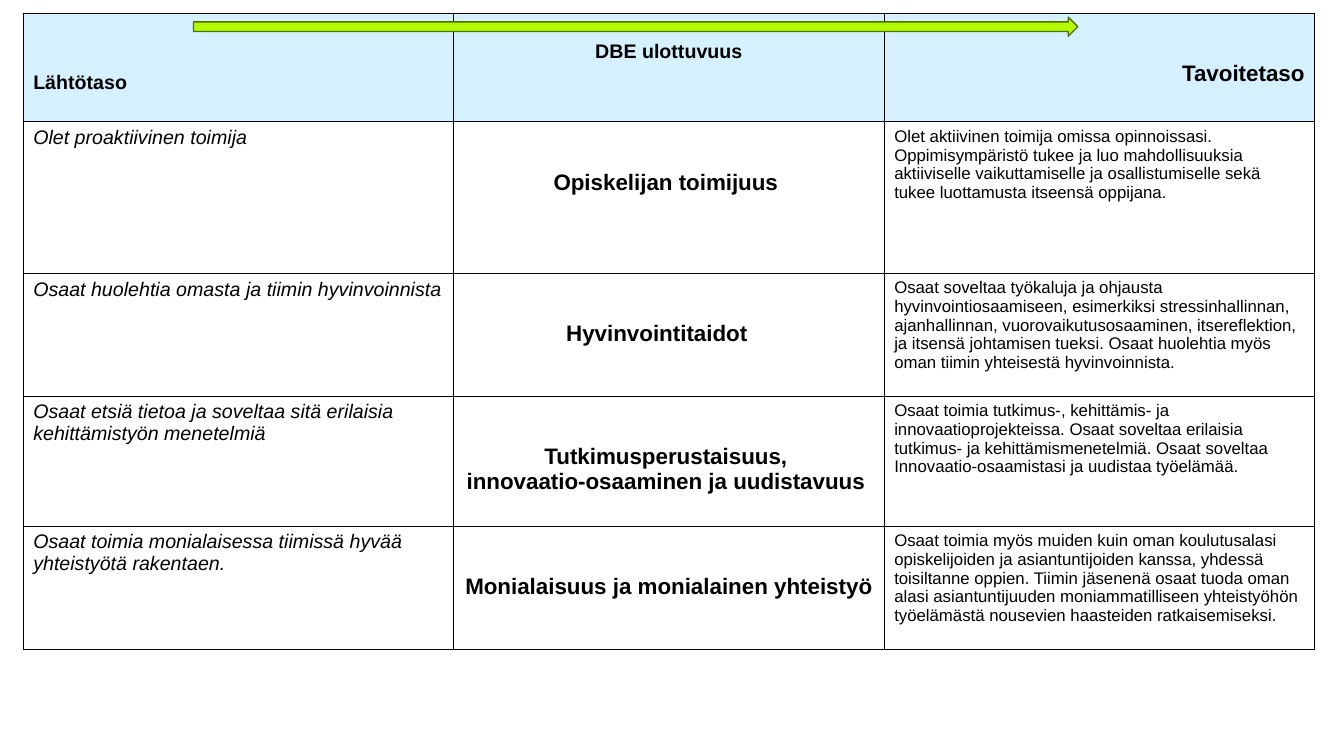
from pptx import Presentation
from pptx.dml.color import RGBColor
from pptx.enum.shapes import MSO_SHAPE as Shape
from pptx.enum.text import PP_ALIGN as Align
from pptx.oxml import parse_xml
from pptx.oxml.ns import nsdecls
from pptx.util import Inches, Pt

BLACK = "000000"
HEADER_FILL = "D5F0FF"
COLUMN_WIDTH = 4.27
ROW_HEIGHTS = [1.08, 1.5, 1.22, 1.29, 1.22]
HEADING_TOP = 0.48

LEVELS = [
    (
        "Olet proaktiivinen toimija",
        ["Opiskelijan toimijuus"],
        0.16,
        "Olet aktiivinen toimija omissa opinnoissasi. Oppimisympäristö tukee ja luo "
        "mahdollisuuksia aktiiviselle vaikuttamiselle ja osallistumiselle sekä tukee "
        "luottamusta itseensä oppijana.",
    ),
    (
        "Osaat huolehtia omasta ja tiimin hyvinvoinnista",
        ["Hyvinvointitaidot"],
        0.34,
        "Osaat soveltaa työkaluja ja ohjausta hyvinvointiosaamiseen, esimerkiksi "
        "stressinhallinnan, ajanhallinnan, vuorovaikutusosaaminen, itsereflektion, ja "
        "itsensä johtamisen tueksi. Osaat huolehtia myös oman tiimin yhteisestä "
        "hyvinvoinnista.",
    ),
    (
        "Osaat etsiä tietoa ja soveltaa sitä erilaisia kehittämistyön menetelmiä",
        ["Tutkimusperustaisuus,", "innovaatio-osaaminen ja uudistavuus"],
        0.16,
        "Osaat toimia tutkimus-, kehittämis- ja innovaatioprojekteissa. Osaat soveltaa "
        "erilaisia tutkimus- ja kehittämismenetelmiä. Osaat soveltaa "
        "Innovaatio-osaamistasi ja uudistaa työelämää.",
    ),
    (
        "Osaat toimia monialaisessa tiimissä hyvää yhteistyötä rakentaen.",
        ["Monialaisuus ja monialainen yhteistyö"],
        0.1,
        "Osaat toimia myös muiden kuin oman koulutusalasi opiskelijoiden ja "
        "asiantuntijoiden kanssa, yhdessä toisiltanne oppien. Tiimin jäsenenä osaat "
        "tuoda oman alasi asiantuntijuuden moniammatilliseen yhteistyöhön työelämästä "
        "nousevien haasteiden ratkaisemiseksi.",
    ),
]


def color(value):
    return RGBColor.from_string(value)


def add_borders(cell):
    properties = cell._tc.get_or_add_tcPr()
    for position, side in enumerate(("lnL", "lnR", "lnT", "lnB")):
        properties.insert(position, parse_xml(
            f'<a:{side} {nsdecls("a")} w="{Pt(0.75)}"><a:solidFill>'
            f'<a:srgbClr val="{BLACK}"/></a:solidFill></a:{side}>'
        ))


def fill_cell(cell, lines, size, align=Align.LEFT, bold=False, italic=False,
              top=0.05, right=0.1, fill=None):
    cell.margin_left, cell.margin_right = Inches(0.1), Inches(right)
    cell.margin_top, cell.margin_bottom = Inches(top), Inches(0.05)
    if fill:
        cell.fill.solid()
        cell.fill.fore_color.rgb = color(fill)
    else:
        cell.fill.background()
    add_borders(cell)
    frame = cell.text_frame
    for index, line in enumerate(lines):
        paragraph = frame.add_paragraph() if index else frame.paragraphs[0]
        paragraph.alignment = align
        run = paragraph.add_run()
        run.text = line
        run.font.name = "Arial"
        run.font.size = Pt(size)
        run.font.bold = bold
        run.font.italic = italic
        run.font.color.rgb = color(BLACK)


def add_level_table(slide):
    table = slide.shapes.add_table(
        len(ROW_HEIGHTS), 3, Inches(0.23), Inches(0.13),
        Inches(3 * COLUMN_WIDTH), Inches(sum(ROW_HEIGHTS)),
    ).table
    table.first_row = False
    table.horz_banding = False
    for column in table.columns:
        column.width = Inches(COLUMN_WIDTH)
    for row, height in zip(table.rows, ROW_HEIGHTS):
        row.height = Inches(height)

    headers = [
        ("Lähtötaso", 14, Align.LEFT, 0.58),
        ("DBE ulottuvuus", 14, Align.CENTER, 0.27),
        ("Tavoitetaso", 16, Align.RIGHT, HEADING_TOP),
    ]
    for column, (title, size, align, top) in enumerate(headers):
        fill_cell(table.cell(0, column), [title], size, align, bold=True,
                  top=top, fill=HEADER_FILL)
    for row, (start, dimension, right, goal) in enumerate(LEVELS, 1):
        fill_cell(table.cell(row, 0), [start], 14, italic=True)
        fill_cell(table.cell(row, 1), dimension, 16, Align.CENTER, bold=True,
                  top=HEADING_TOP, right=right)
        fill_cell(table.cell(row, 2), [goal], 12)


def add_progress_arrow(slide):
    arrow = slide.shapes.add_shape(
        Shape.RIGHT_ARROW, Inches(1.92), Inches(0.17), Inches(8.77), Inches(0.19))
    arrow.shadow.inherit = False
    arrow.fill.solid()
    arrow.fill.fore_color.rgb = color("B4FA00")
    arrow.line.color.rgb = color("4F6E00")
    arrow.line.width = Pt(1)


def main():
    presentation = Presentation()
    presentation.slide_width = Inches(13.33)
    presentation.slide_height = Inches(7.5)
    slide = presentation.slides.add_slide(presentation.slide_layouts[6])
    add_level_table(slide)
    add_progress_arrow(slide)
    presentation.save("out.pptx")


if __name__ == "__main__":
    main()
